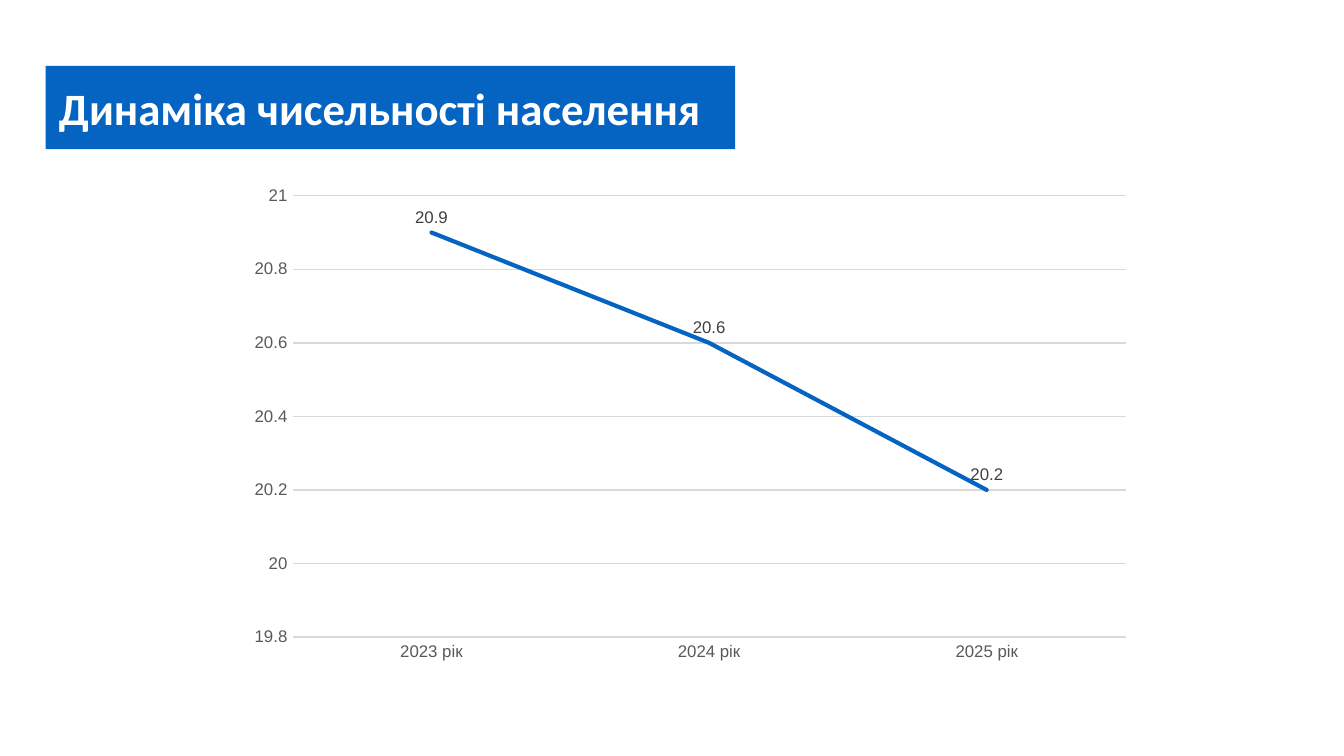
from pptx import Presentation
from pptx.chart.data import CategoryChartData
from pptx.dml.color import RGBColor
from pptx.enum.chart import XL_CHART_TYPE, XL_LABEL_POSITION, XL_MARKER_STYLE, XL_TICK_MARK
from pptx.enum.shapes import MSO_SHAPE
from pptx.enum.text import MSO_ANCHOR, PP_ALIGN
from pptx.util import Inches, Pt

RECT = MSO_SHAPE.RECTANGLE
LINE = XL_CHART_TYPE.LINE_STACKED
ABOVE = XL_LABEL_POSITION.ABOVE
NO_MARK = XL_MARKER_STYLE.NONE
NO_TICK = XL_TICK_MARK.NONE
MIDDLE = MSO_ANCHOR.MIDDLE
LEFT = PP_ALIGN.LEFT

TITLE = "Динаміка чисельності населення"
YEARS = ("2023 рік", "2024 рік", "2025 рік")
SERIES = ("Series 1", (20.9, 20.6, 20.2))
SCALE = {"minimum_scale": 19.8, "maximum_scale": 21, "major_unit": 0.2}

WIDTH = Inches(10)
HEIGHT = WIDTH * 9 // 16
TITLE_BOX = (0.34, 0.49, 5.13, 0.62)
CHART_BOX = (1.76, 1.31, 6.75, 3.69)

THEME = {
    "blue": "0563C1", "white": "FFFFFF", "black": "000000",
    "axis": "595959", "label": "404040", "grid": "D9D9D9",
    "head": "Calibri", "body": "Arial",
    "title_size": 24, "chart_size": 10, "small": 9,
    "thin": 0.75, "thick": 2.25,
}


def color(name):
    return RGBColor.from_string(THEME[name])


def style(font, size, tint, face="body", bold=False):
    font.name = THEME[face]
    font.size = Pt(THEME[size])
    font.bold = bold
    font.color.rgb = color(tint)


def stroke(line, tint, width):
    line.color.rgb = color(tint)
    line.width = Pt(THEME[width])


def add_text(slide, text, box, fill, **look):
    shape = slide.shapes.add_shape(RECT, *map(Inches, box))
    shape.shadow.inherit = False
    shape.fill.solid()
    shape.fill.fore_color.rgb = color(fill)
    shape.line.fill.background()
    frame = shape.text_frame
    frame.word_wrap = True
    frame.vertical_anchor = MIDDLE
    for side in ("left", "top", "right", "bottom"):
        setattr(frame, f"margin_{side}", Inches(0.1))
    para = frame.paragraphs[0]
    para.alignment = LEFT
    run = para.add_run()
    run.text = text
    style(run.font, **look)


def add_trend(slide):
    data = CategoryChartData()
    data.categories = YEARS
    data.add_series(*SERIES)
    chart = slide.shapes.add_chart(LINE, *map(Inches, CHART_BOX), data).chart
    chart.has_title = False
    chart.has_legend = False
    style(chart.font, "chart_size", "black")

    for axis in (chart.category_axis, chart.value_axis):
        axis.major_tick_mark = axis.minor_tick_mark = NO_TICK
        style(axis.tick_labels.font, "small", "axis")
    stroke(chart.category_axis.format.line, "grid", "thin")

    axis = chart.value_axis
    for key, value in SCALE.items():
        setattr(axis, key, value)
    axis.format.line.fill.background()
    axis.has_major_gridlines = True
    stroke(axis.major_gridlines.format.line, "grid", "thin")

    plot = chart.plots[0]
    plot.vary_by_categories = False
    trend = plot.series[0]
    trend.smooth = False
    trend.marker.style = NO_MARK
    stroke(trend.format.line, "blue", "thick")
    trend.format.line._get_or_add_ln().set("cap", "rnd")

    labels = trend.data_labels
    labels.show_value = True
    labels.position = ABOVE
    style(labels.font, "small", "label")


deck = Presentation()
deck.slide_width = WIDTH
deck.slide_height = HEIGHT
slide = deck.slides.add_slide(deck.slide_layouts[6])
add_text(slide, TITLE, TITLE_BOX, "blue",
         size="title_size", tint="white", face="head", bold=True)
add_trend(slide)
deck.save("out.pptx")
